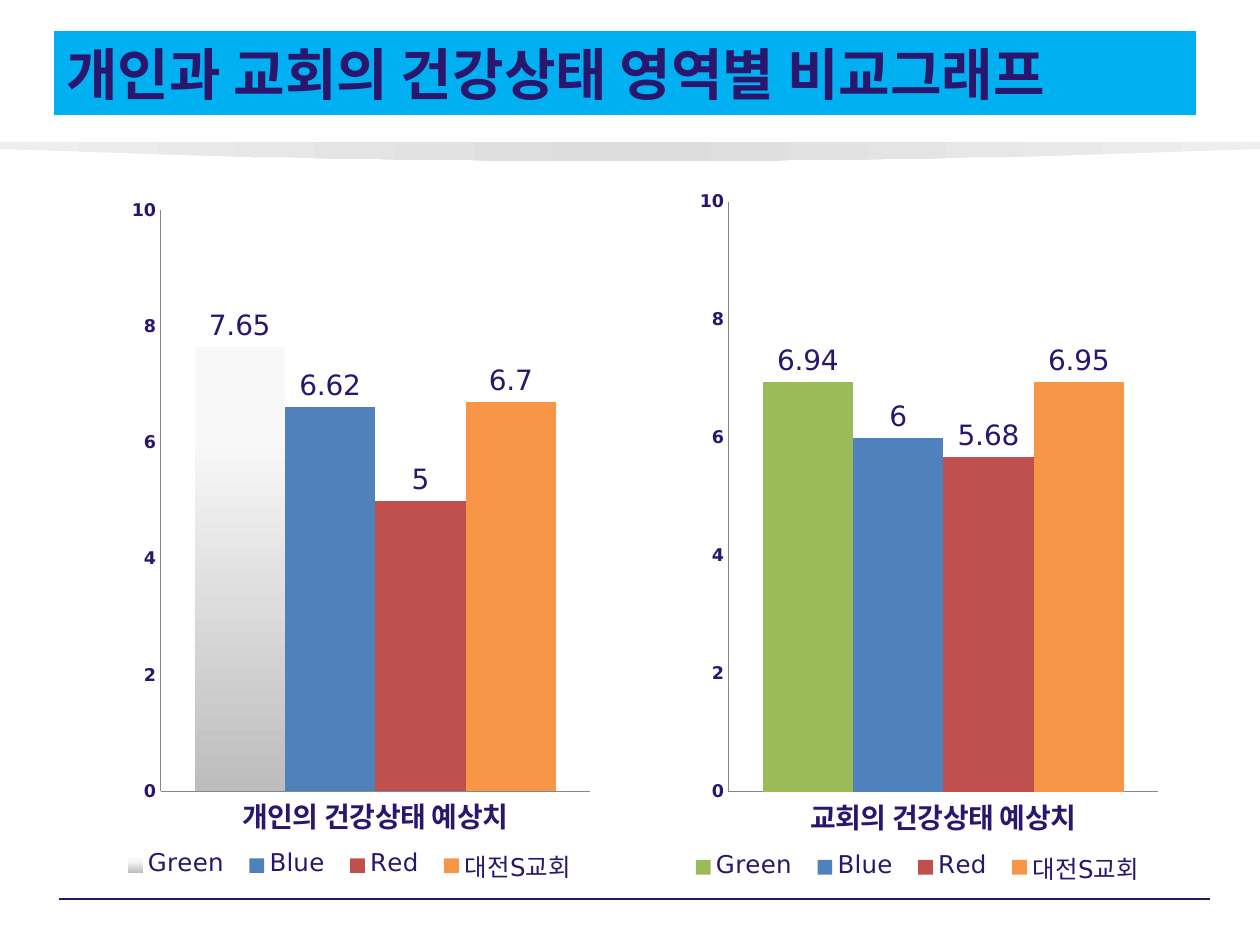
from copy import deepcopy

from lxml import etree
from pptx import Presentation
from pptx.chart.data import CategoryChartData
from pptx.dml.color import RGBColor
from pptx.enum.chart import XL_CHART_TYPE as ChartType
from pptx.enum.chart import XL_LABEL_POSITION as LabelPos
from pptx.enum.chart import XL_LEGEND_POSITION as LegendPos
from pptx.enum.chart import XL_TICK_MARK as Tick
from pptx.enum.shapes import MSO_CONNECTOR as Connector
from pptx.enum.shapes import MSO_SHAPE as Shape
from pptx.enum.text import MSO_ANCHOR as Anchor
from pptx.enum.text import PP_ALIGN as Align
from pptx.oxml import parse_xml
from pptx.oxml.ns import nsdecls, qn
from pptx.util import Pt

PX = 914400 / 126
LATIN, KOREAN = "DejaVu Sans", "Noto Sans CJK KR"
INK = RGBColor(0x2B, 0x16, 0x6E)
SKY = RGBColor(0x00, 0xB0, 0xF0)
AXIS = RGBColor(0x86, 0x86, 0x86)
BAND_EDGE = RGBColor(0xEE, 0xEE, 0xEE)
BAND_MID = RGBColor(0xDD, 0xDD, 0xDD)
SILVER_TOP = RGBColor(0xF8, 0xF8, 0xF8)
SILVER_BOTTOM = RGBColor(0xBD, 0xBD, 0xBD)
GREEN = RGBColor(0x9B, 0xBB, 0x59)
BLUE = RGBColor(0x4F, 0x81, 0xBD)
RED = RGBColor(0xC0, 0x50, 0x4D)
ORANGE = RGBColor(0xF7, 0x96, 0x46)

NAMES = ["Green", "Blue", "Red", "대전S교회"]
PLOT_BOX = {"x": 0.152, "y": 0.033, "w": 0.789, "h": 0.822}
LEGEND_BOX = {"x": 0.06, "y": 0.93, "w": 0.88, "h": 0.06}
CHARTS = [
    ((78, 187, 544, 707), "개인의 건강상태 예상치", [7.65, 6.62, 5, 6.7],
     [None, BLUE, RED, ORANGE]),
    ((646, 178, 544, 718), "교회의 건강상태 예상치", [6.94, 6, 5.68, 6.95],
     [GREEN, BLUE, RED, ORANGE]),
]


def px(*lengths):
    return [round(n * PX) for n in lengths]


def style_font(font, size, bold=False, latin=LATIN):
    font.size, font.bold, font.name = Pt(size), bold, latin
    font.color.rgb = INK
    etree.SubElement(font._rPr, qn("a:ea")).set("typeface", KOREAN)


def fill_gradient(fill, first, last, angle, start=0):
    fill.gradient()
    fill.gradient_angle = angle
    for stop, color, position in zip(fill.gradient_stops, (first, last), (start, 1)):
        stop.color.rgb, stop.position = color, position


def add_band(s, x, y, w, h, side_h, steps=40):
    """Grey band whose lower edge bulges from side_h to h."""
    edge = []
    for i in range(steps + 1):
        u = 2 * i / steps - 1
        edge.append((x + w * i / steps, y + h - (h - side_h) * u * u))
    builder = s.shapes.build_freeform(x, y, scale=PX)
    builder.add_line_segments(edge + [(x + w, y)], close=True)
    sp = builder.convert_to_shape()
    sp.shadow.inherit = False
    sp.line.fill.background()
    fill_gradient(sp.fill, BAND_EDGE, BAND_MID, 0)
    stops = sp._element.spPr.find(".//" + qn("a:gsLst"))
    stops[1].set("pos", "50000")
    end = deepcopy(stops[0])
    end.set("pos", "100000")
    stops.append(end)


def add_rule(s, x, y, w):
    line = s.shapes.add_connector(Connector.STRAIGHT, *px(x, y, x + w, y))
    line.line.color.rgb, line.line.width = INK, Pt(0.75)
    etree.SubElement(line._element.spPr, qn("a:effectLst"))


def add_title(s, x, y, w, h, text):
    sp = s.shapes.add_shape(Shape.RECTANGLE, *px(x, y, w, h))
    sp.shadow.inherit = False
    sp.fill.solid()
    sp.fill.fore_color.rgb = SKY
    sp.line.fill.background()
    tf = sp.text_frame
    tf.word_wrap, tf.vertical_anchor = True, Anchor.MIDDLE
    tf.text = text
    p = tf.paragraphs[0]
    p.alignment = Align.LEFT
    style_font(p.runs[0].font, 32, True, KOREAN)


def set_layout(part, index, box, target=""):
    """Fix a chart part to a box given as fractions of the chart."""
    for old in part.findall(qn("c:layout")):
        part.remove(old)
    modes = "".join(f'<c:{k}Mode val="edge"/>' for k in "xy")
    sizes = "".join(f'<c:{k} val="{v}"/>' for k, v in box.items())
    part.insert(index, parse_xml(
        f'<c:layout {nsdecls("c")}><c:manualLayout>{target}'
        f"{modes}{sizes}</c:manualLayout></c:layout>"))


def add_health_chart(s, x, y, w, h, category, values, colors):
    """Column chart with one series per group; a colour of None means silver."""
    data = CategoryChartData()
    data.categories = [category]
    for name, value in zip(NAMES, values):
        data.add_series(name, [value])
    chart = s.shapes.add_chart(ChartType.COLUMN_CLUSTERED, *px(x, y, w, h), data).chart
    style_font(chart.font, 10)
    chart.has_title = False
    chart.has_legend = True
    chart.legend.position = LegendPos.BOTTOM
    chart.legend.include_in_layout = False
    style_font(chart.legend.font, 14)
    root = chart._chartSpace.chart
    set_layout(root.plotArea, 0, PLOT_BOX, '<c:layoutTarget val="inner"/>')
    set_layout(root.find(qn("c:legend")), 1, LEGEND_BOX)

    for axis, size in ((chart.category_axis, 16), (chart.value_axis, 10)):
        axis.major_tick_mark = axis.minor_tick_mark = Tick.NONE
        axis.has_major_gridlines = False
        axis.format.line.color.rgb = AXIS
        axis.format.line.width = Pt(0.75)
        style_font(axis.tick_labels.font, size, True)
    scale = chart.value_axis
    scale.minimum_scale, scale.maximum_scale, scale.major_unit = 0, 10, 2

    plot = chart.plots[0]
    plot.gap_width, plot.overlap, plot.vary_by_categories = 75, 0, False
    for series, color in zip(plot.series, colors):
        fill = series.format.fill
        if color is None:
            fill_gradient(fill, SILVER_TOP, SILVER_BOTTOM, 270, 0.2)
        else:
            fill.solid()
            fill.fore_color.rgb = color
        labels = series.data_labels
        labels.show_value, labels.position = True, LabelPos.OUTSIDE_END
        style_font(labels.font, 16)


def main():
    prs = Presentation()
    prs.slide_width, prs.slide_height = px(1260, 945)
    s = prs.slides.add_slide(prs.slide_layouts[6])
    add_band(s, 0, 142, 1261, 19, 7)
    add_rule(s, 59, 899, 1151)
    add_title(s, 54, 31, 1142, 84, "개인과 교회의 건강상태 영역별 비교그래프")
    for box, category, values, colors in CHARTS:
        add_health_chart(s, *box, category, values, colors)
    prs.save("out.pptx")


if __name__ == "__main__":
    main()
